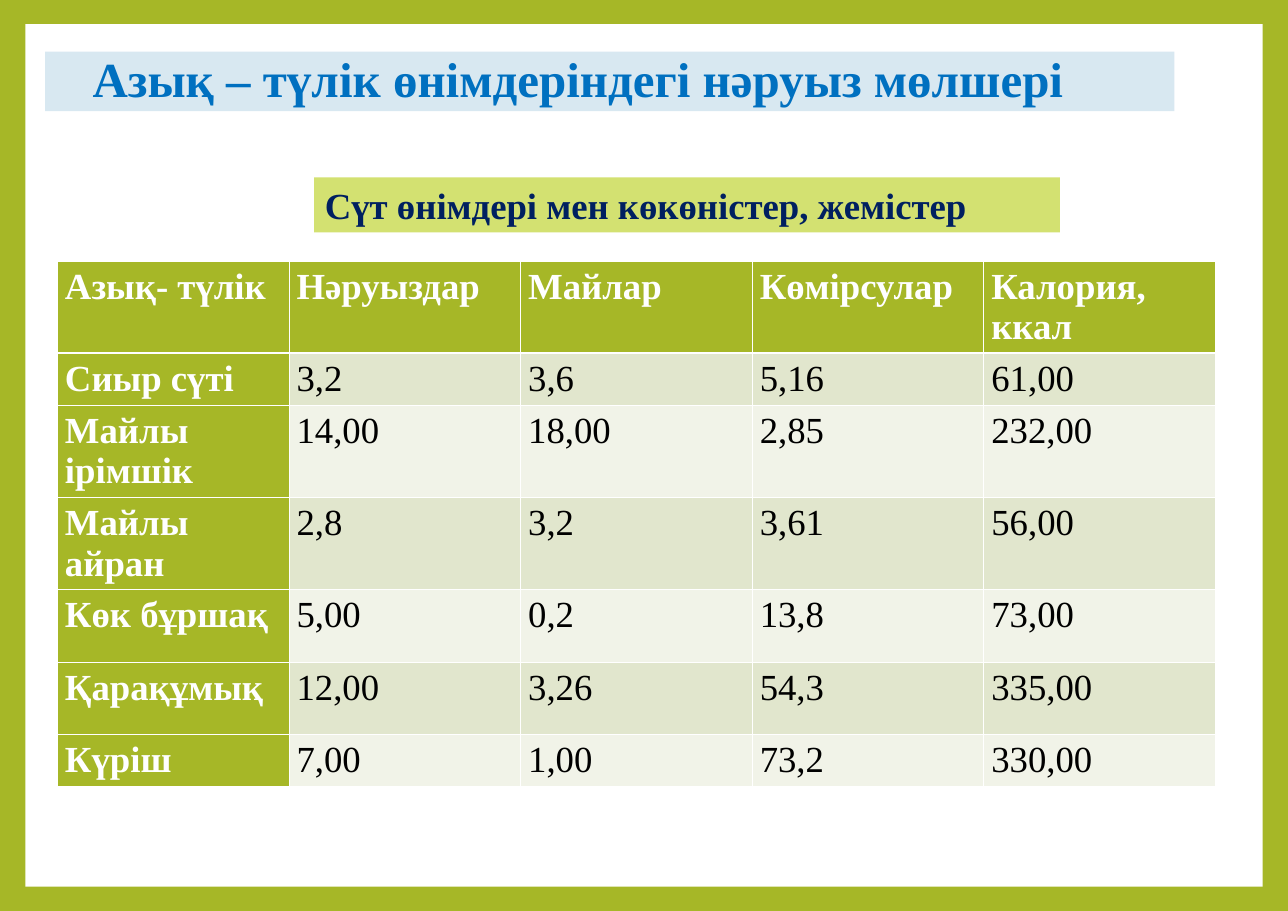
from lxml import etree
from pptx import Presentation
from pptx import util as u
from pptx.dml.color import RGBColor
from pptx.enum import shapes, text
from pptx.oxml.ns import qn

WIDTH, HEIGHT = u.Inches(11.69), u.Inches(8.27)
FONT = "Times New Roman"
COLOURS = {
    "green": "A6B727", "white": "FFFFFF", "black": "000000",
    "title_band": "D8E8F1", "title": "0070C0",
    "subtitle_band": "D3E171", "subtitle": "002060",
    "odd_row": "E1E6CD", "even_row": "F1F3E8",
}
FOODS = [
    ["Азық- түлік", "Нәруыздар", "Майлар", "Көмірсулар", "Калория, ккал"],
    ["Сиыр сүті", "3,2", "3,6", "5,16", "61,00"],
    ["Майлы ірімшік", "14,00", "18,00", "2,85", "232,00"],
    ["Майлы айран", "2,8", "3,2", "3,61", "56,00"],
    ["Көк бұршақ", "5,00", "0,2", "13,8", "73,00"],
    ["Қарақұмық", "12,00", "3,26", "54,3", "335,00"],
    ["Күріш", "7,00", "1,00", "73,2", "330,00"],
]
ROW_SHARES = [0.8, 0.4, 0.8, 0.8, 0.66, 0.66, 0.4]
THIN, THICK = 0.45, 1.47


def colour(name):
    return RGBColor.from_string(COLOURS[name])


def box(left, top, width, height):
    """Turn percentages of the slide into lengths."""
    return [round(share * side / 100) for share, side in
            zip((left, top, width, height), (WIDTH, HEIGHT, WIDTH, HEIGHT))]


def fill(item, name):
    item.fill.solid()
    item.fill.fore_color.rgb = colour(name)


def add_run(paragraph, words, size, name, bold):
    run = paragraph.add_run()
    run.text = words
    run.font.name = FONT
    run.font.size = u.Pt(size)
    run.font.bold = bold
    run.font.color.rgb = colour(name)


def add_panel(slide, area, name):
    shape = slide.shapes.add_shape(shapes.MSO_SHAPE.RECTANGLE, *area)
    shape.shadow.inherit = False
    fill(shape, name)
    shape.line.fill.background()
    return shape


def add_heading(slide, area, band, words, size, name, indent, spacing):
    frame = add_panel(slide, area, band).text_frame
    frame.word_wrap = True
    frame.vertical_anchor = text.MSO_ANCHOR.MIDDLE
    frame.margin_left = u.Inches(indent)
    paragraph = frame.paragraphs[0]
    paragraph.alignment = text.PP_ALIGN.LEFT
    paragraph.line_spacing = spacing
    add_run(paragraph, words, size, name, True)


def add_borders(cell, widths):
    properties = cell._tc.get_or_add_tcPr()
    for side, width in widths.items():
        line = etree.SubElement(properties, qn(f"a:ln{side}"), w=str(u.Pt(width)))
        solid = etree.SubElement(line, qn("a:solidFill"))
        etree.SubElement(solid, qn("a:srgbClr"), val=COLOURS["white"])


def fill_cell(cell, words, row, column):
    heading = row == 0 or column == 0
    # Borders come before the fill in the cell properties
    add_borders(cell, {"L": THIN, "R": THIN,
                       "T": THICK if row == 1 else THIN,
                       "B": THICK if row == 0 else THIN})
    fill(cell, "green" if heading else "odd_row" if row % 2 else "even_row")
    cell.margin_left = cell.margin_right = u.Inches(0.07)
    cell.margin_top = cell.margin_bottom = u.Inches(0.05)
    add_run(cell.text_frame.paragraphs[0], words, 24,
            "white" if heading else "black", heading)


def add_food_table(slide, area):
    table = slide.shapes.add_table(len(FOODS), len(FOODS[0]), *area).table
    for column in table.columns:
        column.width = area[2] // len(FOODS[0])
    for row, share in zip(table.rows, ROW_SHARES):
        row.height = round(area[3] * share / sum(ROW_SHARES))
    for row, values in enumerate(FOODS):
        for column, words in enumerate(values):
            fill_cell(table.cell(row, column), words, row, column)


def build_slide(presentation):
    slide = presentation.slides.add_slide(presentation.slide_layouts[6])
    # Green frame around a white page
    fill(slide.background, "green")
    add_panel(slide, box(1.97, 2.66, 96.07, 94.68), "white")
    # Title and subtitle bands
    add_heading(slide, box(3.51, 5.68, 87.68, 6.53), "title_band",
                "Азық – түлік өнімдеріндегі нәруыз мөлшері", 32, "title", 0.43, 0.9)
    add_heading(slide, box(24.38, 19.47, 57.91, 6.05), "subtitle_band",
                "Сүт өнімдері мен көкөністер, жемістер", 24, "subtitle", 0.1, 1.0)
    # Nutrients by food
    add_food_table(slide, box(4.45, 28.66, 89.91, 54.53))


def main():
    presentation = Presentation()
    presentation.slide_width, presentation.slide_height = WIDTH, HEIGHT
    build_slide(presentation)
    presentation.save("out.pptx")


if __name__ == "__main__":
    main()
